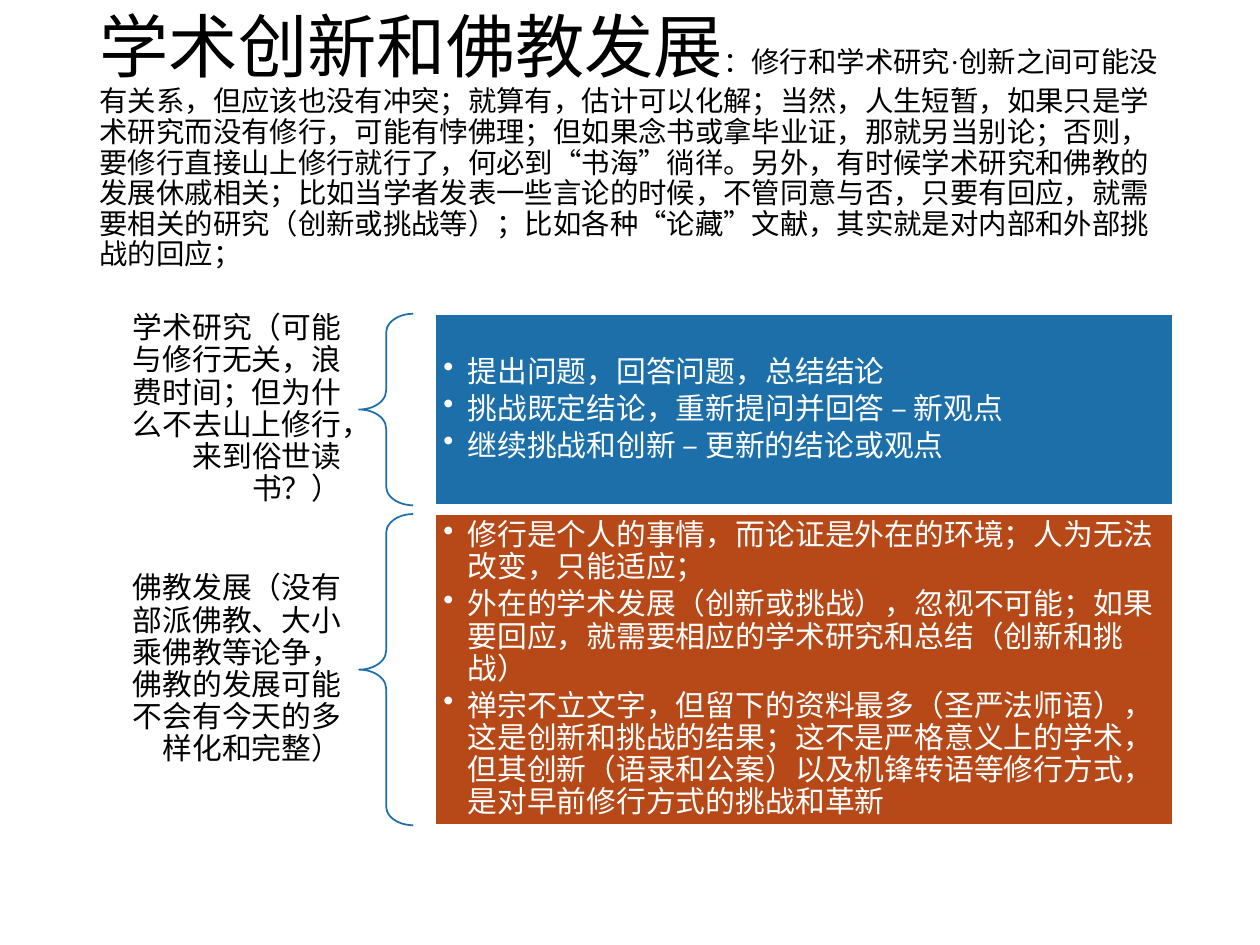
from lxml import etree
from pptx import Presentation
from pptx import util as u
from pptx.dml.color import RGBColor
from pptx.enum import shapes, text
from pptx.oxml.ns import qn

FONT = "Times New Roman"
BLUE, RUST, BLACK, WHITE = "1D6FA9", "B74919", "000000", "FFFFFF"
BODY_SIZE = 17

# Columns as (left, width) and the rows' shared measures, in inches
LABEL, BRACE, PANEL = (0.69, 2.15), (2.85, 0.43), (3.45, 5.86)
TOP, GAP, LABEL_HEIGHT = 2.49, 0.07, 1.52

TITLE = "学术创新和佛教发展"
INTRO = (
    "：修行和学术研究·创新之间可能没有关系，但应该也没有冲突；就算有，估计可以化解；"
    "当然，人生短暂，如果只是学术研究而没有修行，可能有悖佛理；但如果念书或拿毕业证，"
    "那就另当别论；否则，要修行直接山上修行就行了，何必到“书海”徜徉。另外，有时候学术"
    "研究和佛教的发展休戚相关；比如当学者发表一些言论的时候，不管同意与否，只要有回应，"
    "就需要相关的研究（创新或挑战等）；比如各种“论藏”文献，其实就是对内部和外部挑战的回应；"
)
# Height, panel colour, label, bullet points
ROWS = [
    (1.52, BLUE,
     "学术研究（可能与修行无关，浪费时间；但为什么不去山上修行，来到俗世读书？）",
     ["提出问题，回答问题，总结结论",
      "挑战既定结论，重新提问并回答 – 新观点",
      "继续挑战和创新 – 更新的结论或观点"]),
    (2.47, RUST,
     "佛教发展（没有部派佛教、大小乘佛教等论争，佛教的发展可能不会有今天的多样化和完整）",
     ["修行是个人的事情，而论证是外在的环境；人为无法改变，只能适应；",
      "外在的学术发展（创新或挑战），忽视不可能；如果要回应，就需要相应的学术研究和总结（创新和挑战）",
      "禅宗不立文字，但留下的资料最多（圣严法师语），这是创新和挑战的结果；这不是严格意义上的学术，"
      "但其创新（语录和公案）以及机锋转语等修行方式，是对早前修行方式的挑战和革新"]),
]


def color(value):
    return RGBColor.from_string(value)


def area(column, top, height):
    left, width = column
    return [u.Inches(n) for n in (left, top, width, height)]


def add_span(para, words, size, ink):
    span = para.add_run()
    span.text = words
    span.font.name = FONT
    span.font.size = u.Pt(size)
    span.font.color.rgb = color(ink)


def set_frame(frame, across, down):
    frame.word_wrap = True
    frame.auto_size = text.MSO_AUTO_SIZE.NONE
    frame.vertical_anchor = text.MSO_ANCHOR.MIDDLE
    frame.margin_left = frame.margin_right = u.Inches(across)
    frame.margin_top = frame.margin_bottom = u.Inches(down)


def set_paragraph(para, align, after=0):
    para.alignment = align
    para.line_spacing = 0.9
    para.space_after = u.Pt(after)


def add_bullet(para):
    para.level = 1
    props = para._p.get_or_add_pPr()
    props.set("marL", str(u.Inches(0.19)))
    props.set("indent", str(-u.Inches(0.19)))
    etree.SubElement(props, qn("a:buChar"), char="•")


def fill_title(page):
    title = page.shapes.title
    title.left, title.top, title.width, title.height = area((0.69, 8.62), 0.4, 1.45)
    set_frame(title.text_frame, 0.1, 0.05)
    para = title.text_frame.paragraphs[0]
    set_paragraph(para, text.PP_ALIGN.LEFT)
    add_span(para, TITLE, 39.6, BLACK)
    add_span(para, INTRO, 16.2, BLACK)


def add_label(page, top, words):
    box = page.shapes.add_textbox(*area(LABEL, top, LABEL_HEIGHT))
    set_frame(box.text_frame, 0.13, 0.05)
    para = box.text_frame.paragraphs[0]
    set_paragraph(para, text.PP_ALIGN.RIGHT)
    add_span(para, words, BODY_SIZE, BLACK)


def add_outlined(page, kind, place, line):
    shape = page.shapes.add_shape(kind, *place)
    shape.shadow.inherit = False
    shape.line.color.rgb = color(line)
    shape.line.width = u.Pt(1)
    return shape


def add_brace(page, top, height):
    brace = add_outlined(page, shapes.MSO_SHAPE.LEFT_BRACE, area(BRACE, top, height), BLUE)
    brace.fill.background()
    brace.adjustments[0] = 0.35
    brace.adjustments[1] = 0.5


def add_panel(page, top, height, fill, points):
    panel = add_outlined(page, shapes.MSO_SHAPE.RECTANGLE, area(PANEL, top, height), WHITE)
    panel.fill.solid()
    panel.fill.fore_color.rgb = color(fill)
    frame = panel.text_frame
    set_frame(frame, 0.07, 0.07)
    for index, words in enumerate(points):
        para = frame.add_paragraph() if index else frame.paragraphs[0]
        set_paragraph(para, text.PP_ALIGN.LEFT, after=2.8)
        add_bullet(para)
        add_span(para, words, BODY_SIZE, WHITE)


def main():
    deck = Presentation()
    deck.slide_width, deck.slide_height = u.Inches(10), u.Inches(7.5)
    page = deck.slides.add_slide(deck.slide_layouts[5])
    fill_title(page)

    # Each row: label centred beside its brace and panel
    top = TOP
    for height, fill, label, points in ROWS:
        add_label(page, top + (height - LABEL_HEIGHT) / 2, label)
        add_brace(page, top, height)
        add_panel(page, top, height, fill, points)
        top += height + GAP

    deck.save("out.pptx")


if __name__ == "__main__":
    main()
